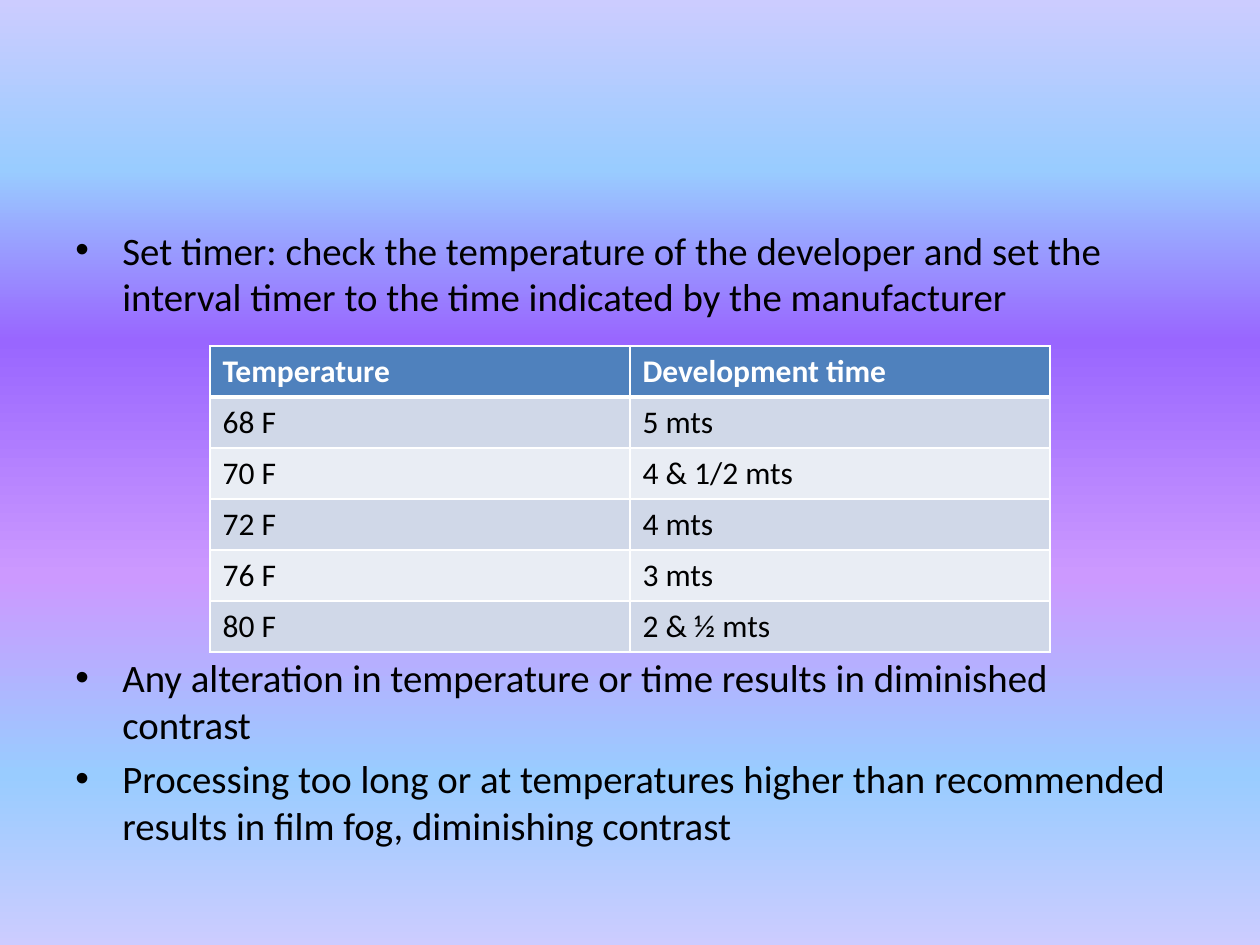
from lxml.etree import SubElement
from pptx import Presentation
from pptx.dml.color import RGBColor
from pptx.oxml.ns import qn
from pptx.util import Emu, Pt

PX = 914400 // 126
FONT = "Calibri"
COLORS = {
    "text": "000000",
    "white": "FFFFFF",
    "header": "4F81BD",
    "odd": "D0D8E8",
    "even": "E9EDF4",
}
BACKGROUND_STOPS = [
    (0, "CCCCFF"), (18, "99CCFF"), (36, "9966FF"),
    (61, "CC99FF"), (82, "99CCFF"), (100, "CCCCFF"),
]
# Bullet text and the space before it in points; the second clears the table
BULLETS = [
    ("Set timer: check the temperature of the developer and set the "
     "interval timer to the time indicated by the manufacturer", 0),
    ("Any alteration in temperature or time results in diminished contrast", 191),
    ("Processing too long or at temperatures higher than recommended "
     "results in film fog, diminishing contrast", 4.4),
]
TIMES = [
    ("Temperature", "Development time"),
    ("68 F", "5 mts"),
    ("70 F", "4 & 1/2 mts"),
    ("72 F", "4 mts"),
    ("76 F", "3 mts"),
    ("80 F", "2 & ½ mts"),
]
BODY_BOX = (63, 220, 1134, 624)
TABLE_LEFT, TABLE_TOP, COLUMN_WIDTH, ROW_HEIGHT = 210, 346, 420, 51
INDENT = 47


def px(value):
    return Emu(value * PX)


def add_run(paragraph, text, size, color, bold=False):
    run = paragraph.add_run()
    run.text = text
    run.font.name = FONT
    run.font.size = Pt(size)
    run.font.bold = bold
    run.font.color.rgb = RGBColor.from_string(COLORS[color])


def paint_background(slide):
    fill = slide.background.fill
    fill.gradient()
    fill.gradient_angle = 270
    stops = next(slide.element.iter(qn("a:gsLst")))
    for stop in list(stops):
        stops.remove(stop)
    for position, color in BACKGROUND_STOPS:
        stop = SubElement(stops, qn("a:gs"), pos=str(position * 1000))
        SubElement(stop, qn("a:srgbClr"), val=color)


def add_bullets(slide):
    frame = slide.shapes.add_textbox(*map(px, BODY_BOX)).text_frame
    frame.word_wrap = True
    for index, (text, space) in enumerate(BULLETS):
        paragraph = frame.add_paragraph() if index else frame.paragraphs[0]
        paragraph.space_before = Pt(space)
        properties = paragraph._p.get_or_add_pPr()
        properties.set("marL", str(px(INDENT)))
        properties.set("indent", str(-px(INDENT)))
        SubElement(properties, qn("a:buFont"), typeface="Arial")
        SubElement(properties, qn("a:buChar"), char="•")
        add_run(paragraph, text, 22.2, "text")


def add_borders(cell, bottom_width, top_width):
    widths = {"a:lnL": 1, "a:lnR": 1, "a:lnT": top_width, "a:lnB": bottom_width}
    properties = cell._tc.get_or_add_tcPr()
    for side, width in widths.items():
        line = SubElement(properties, qn(side), w=str(Pt(width)))
        fill = SubElement(line, qn("a:solidFill"))
        SubElement(fill, qn("a:srgbClr"), val=COLORS["white"])


def add_time_table(slide):
    rows, columns = len(TIMES), len(TIMES[0])
    table = slide.shapes.add_table(
        rows, columns, px(TABLE_LEFT), px(TABLE_TOP),
        px(COLUMN_WIDTH * columns), px(ROW_HEIGHT * rows)).table
    for row, values in enumerate(TIMES):
        header = row == 0
        shade = "header" if header else ("odd" if row % 2 else "even")
        for column, value in enumerate(values):
            cell = table.cell(row, column)
            add_borders(cell, 3 if header else 1, 3 if row == 1 else 1)
            cell.fill.solid()
            cell.fill.fore_color.rgb = RGBColor.from_string(COLORS[shade])
            add_run(cell.text_frame.paragraphs[0], value, 18,
                    "white" if header else "text", header)


def main():
    presentation = Presentation()
    presentation.slide_width, presentation.slide_height = px(1260), px(945)
    slide = presentation.slides.add_slide(presentation.slide_layouts[6])
    paint_background(slide)
    add_bullets(slide)
    add_time_table(slide)
    presentation.save("out.pptx")


if __name__ == "__main__":
    main()
